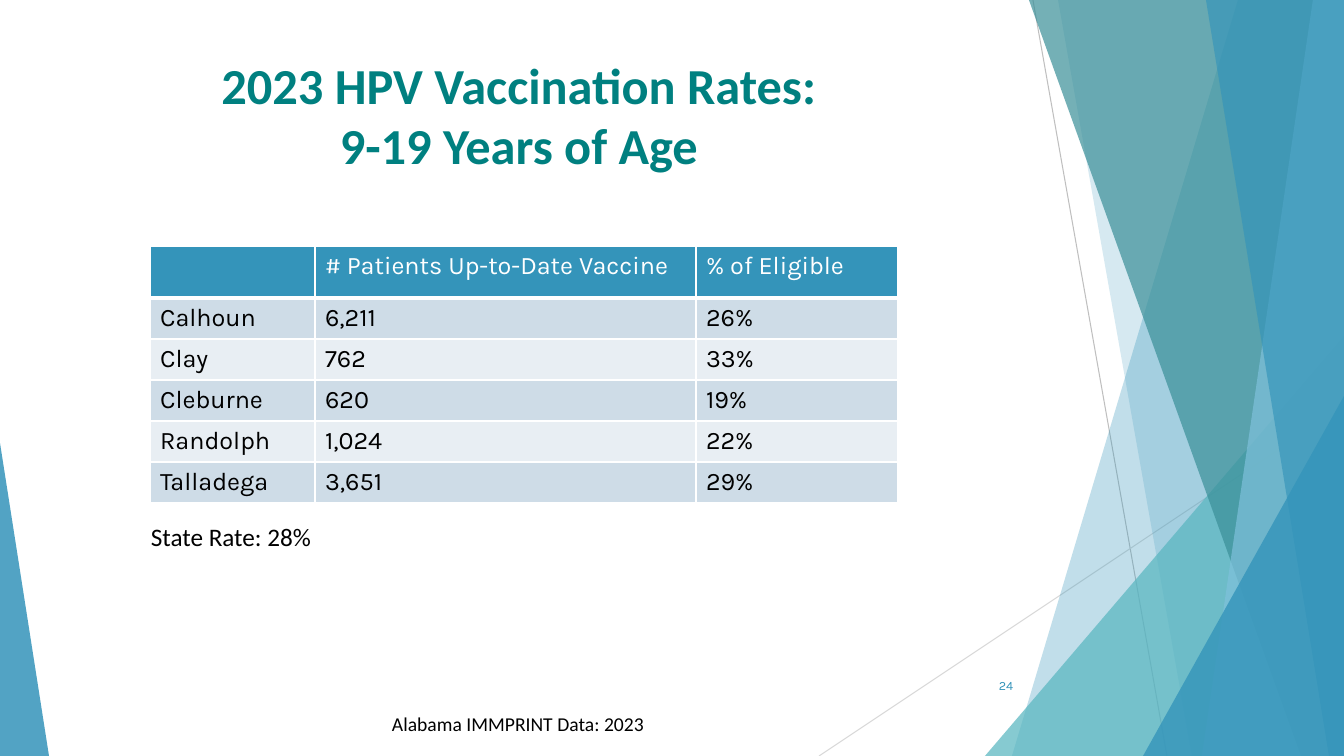
from lxml.etree import SubElement
from pptx import Presentation
from pptx.dml.color import RGBColor
from pptx.enum.shapes import MSO_CONNECTOR, MSO_SHAPE
from pptx.enum.text import MSO_ANCHOR, PP_ALIGN
from pptx.oxml.ns import qn
from pptx.util import Pt

PX = 914400 / 100.8
W, H = 1344, 756
COLORS = {
    "blue": "3494BA", "aqua": "58B6C0", "teal": "3A8F98", "sky": "7FC1DB",
    "title": "008080", "white": "FFFFFF", "black": "000000",
    "band": "CEDCE7", "light": "E8EEF3", "gray": "BFBFBF", "silver": "D9D9D9",
}

# Content
TITLE = "2023 HPV Vaccination Rates:\v9-19 Years of Age"
ROWS = [
    ("", "# Patients Up-to-Date Vaccine", "% of Eligible"),
    ("Calhoun", "6,211", "26%"),
    ("Clay", "762", "33%"),
    ("Cleburne", "620", "19%"),
    ("Randolph", "1,024", "22%"),
    ("Talladega", "3,651", "29%"),
]
COL_WIDTHS = (165, 381, 202)
HEADER_H, ROW_H = 52, 41
# text, box, size, font, color, alignment, anchor
LABELS = [
    ("24", (947, 666, 76, 40), 9, "Karla", "blue", PP_ALIGN.RIGHT, MSO_ANCHOR.MIDDLE),
    ("State Rate: 28%", (141, 516, 194, 40), 18, "Calibri", "black", PP_ALIGN.LEFT, MSO_ANCHOR.TOP),
    ("Alabama IMMPRINT Data: 2023", (382, 707, 668, 34), 14, "Calibri", "black",
     PP_ALIGN.LEFT, MSO_ANCHOR.TOP),
]
# Decoration: start, end, color
LINES = [((1033, 0), (1167, H), "gray"), ((W, 406), (819, H), "silver")]
# Bands reach the right edge: top-left x, bottom-left x, color, opacity %
# Triangles: box, apex position, color, opacity %
FACETS = [
    ("band", (1238, 1012), "blue", 30),
    ("band", (1058, 1192), "blue", 20),
    ("triangle", ((985, 336, 359, 420), 1), "aqua", 72),
    ("band", (1029, 1301), "teal", 70),
    ("band", (1313, 1202), "sky", 70),
    ("band", (1206, 1329), "blue", 65),
    ("triangle", ((1143, 396, 201, 360), 1), "blue", 80),
    ("triangle", ((0, 443, 49, 313), 0), "blue", 85),
]


def emu(*lengths):
    return [round(n * PX) for n in lengths]


def rgb(name):
    return RGBColor.from_string(COLORS[name])


def style(p, size, font, color, bold=False):
    p.font.size, p.font.name, p.font.bold = Pt(size), font, bold
    p.font.color.rgb = rgb(color)


def add_border(cell, side, width):
    ln = SubElement(cell._tc.get_or_add_tcPr(), qn(f"a:ln{side}"), w=str(Pt(width)))
    fill = SubElement(ln, qn("a:solidFill"))
    SubElement(fill, qn("a:srgbClr"), val=COLORS["white"])


prs = Presentation()
prs.slide_width, prs.slide_height = emu(W, H)
slide = prs.slides.add_slide(prs.slide_layouts[5])
shapes = slide.shapes

# Thin lines
for start, end, color in LINES:
    line = shapes.add_connector(MSO_CONNECTOR.STRAIGHT, *emu(*start, *end))
    line.line.color.rgb = rgb(color)
    line.line.width = Pt(0.75)
    SubElement(line._element.spPr, qn("a:effectLst"))

# Translucent facets
for kind, geometry, color, opacity in FACETS:
    if kind == "band":
        top_x, bottom_x = geometry
        outline = shapes.build_freeform(top_x, 0, scale=PX)
        outline.add_line_segments([(W, 0), (W, H), (bottom_x, H)], close=True)
        sp = outline.convert_to_shape()
    else:
        box, apex = geometry
        sp = shapes.add_shape(MSO_SHAPE.ISOSCELES_TRIANGLE, *emu(*box))
        sp.adjustments[0] = apex
    sp.shadow.inherit = False
    sp.line.fill.background()
    sp.fill.solid()
    sp.fill.fore_color.rgb = rgb(color)
    clr = sp._element.spPr.find(qn("a:solidFill")).find(qn("a:srgbClr"))
    SubElement(clr, qn("a:alpha"), val=str(opacity * 1000))

# Title, in front of the facets
title = shapes.title
shapes._spTree.append(title._element)
title.left, title.top, title.width, title.height = emu(0, 49, 1038, 145)
tf = title.text_frame
tf.text = TITLE
tf.word_wrap = True
tf.vertical_anchor = MSO_ANCHOR.TOP
tf.paragraphs[0].alignment = PP_ALIGN.CENTER
style(tf.paragraphs[0], 36, "Calibri", "title", True)

# Table
table_h = HEADER_H + ROW_H * (len(ROWS) - 1)
table = shapes.add_table(len(ROWS), len(COL_WIDTHS),
                         *emu(150, 246, sum(COL_WIDTHS), table_h)).table
for column, width in zip(table.columns, COL_WIDTHS):
    column.width = emu(width)[0]
for i, values in enumerate(ROWS):
    header = i == 0
    table.rows[i].height = emu(HEADER_H if header else ROW_H)[0]
    fill = "blue" if header else ("light", "band")[i % 2]
    for j, value in enumerate(values):
        cell = table.cell(i, j)
        cell.text = value
        style(cell.text_frame.paragraphs[0], 18, "Karla", "white" if header else "black")
        for side in "LRTB":
            add_border(cell, side, 3 if header and side == "B" else 1)
        cell.fill.solid()
        cell.fill.fore_color.rgb = rgb(fill)

# Page number and notes below the table
for text, box, size, font, color, align, anchor in LABELS:
    tf = shapes.add_textbox(*emu(*box)).text_frame
    tf.text = text
    tf.word_wrap = True
    tf.vertical_anchor = anchor
    tf.paragraphs[0].alignment = align
    style(tf.paragraphs[0], size, font, color)

prs.save("out.pptx")
